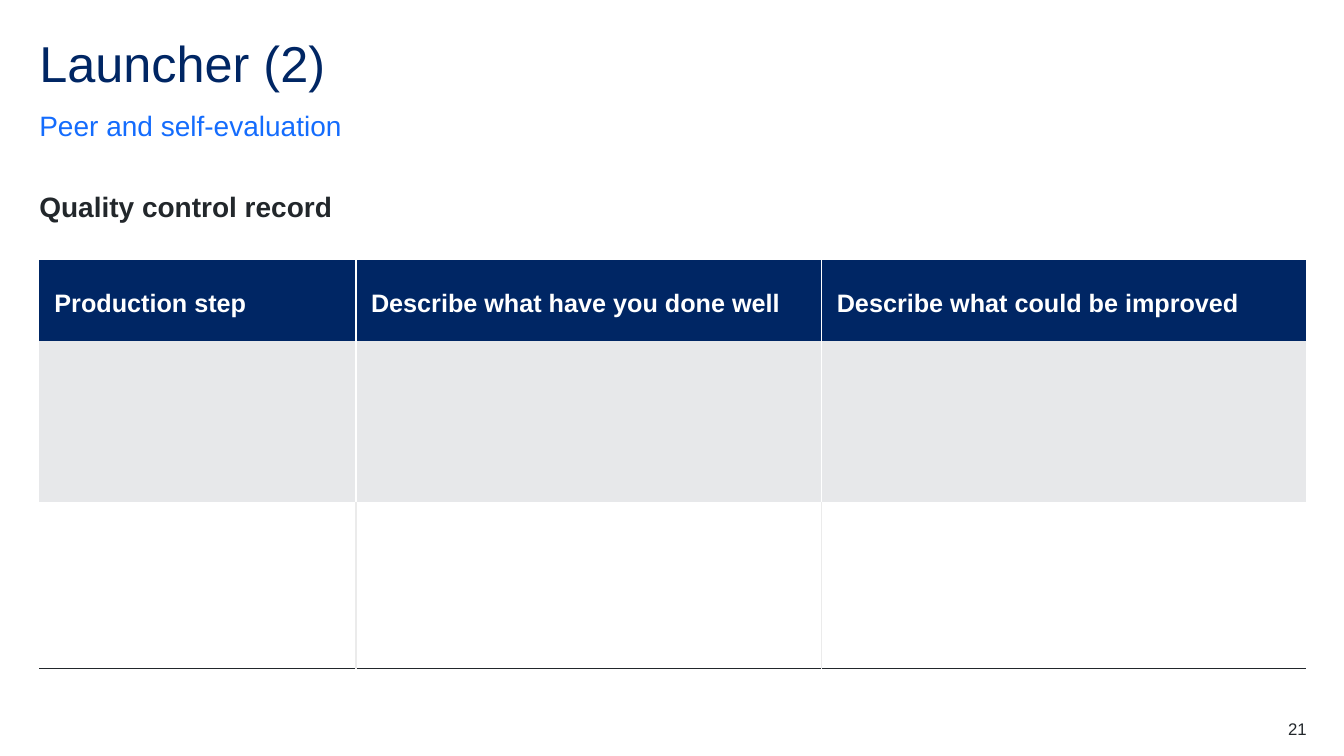
from dataclasses import dataclass

from lxml.etree import SubElement
from pptx import Presentation
from pptx.dml.color import RGBColor
from pptx.enum.text import MSO_ANCHOR, MSO_AUTO_SIZE, PP_ALIGN
from pptx.oxml.ns import qn
from pptx.util import Inches, Pt


@dataclass(frozen=True)
class Theme:
    """Colours, font and type sizes of the slide."""
    font: str = "Arial"
    navy: str = "002664"
    blue: str = "146CFD"
    ink: str = "22272B"
    white: str = "FFFFFF"
    band: str = "E7E8EA"
    rule: str = "EBEBEB"
    title_size: int = 36
    lead_size: int = 20
    header_size: int = 18
    number_size: int = 12


THEME = Theme()
LEFT, WIDTH = 0.39, 12.56
COLUMN_WIDTHS = (3.14, 4.62, 4.8)
ROW_HEIGHTS = (0.8, 1.6, 1.65)
ROW_FILLS = (THEME.navy, THEME.band, THEME.white)
DIVIDERS = (THEME.white, THEME.white, THEME.rule)
HEADERS = (
    "Production step",
    "Describe what have you done well",
    "Describe what could be improved",
)
NO_STYLE = "{2D5ABB26-0587-4C30-8999-92F81FD0307C}"


def write(text_frame, text, size, color, bold=False, line_spacing=1.0,
          before=0, after=0, align=PP_ALIGN.LEFT):
    """Set one paragraph of text and format it."""
    text_frame.text = text
    paragraph = text_frame.paragraphs[0]
    paragraph.alignment = align
    paragraph.line_spacing = line_spacing
    paragraph.space_before, paragraph.space_after = Pt(before), Pt(after)
    font = paragraph.runs[0].font
    font.name, font.size, font.bold = THEME.font, Pt(size), bold
    font.color.rgb = RGBColor.from_string(color)


def prepare_frame(shape, anchor):
    """Remove the insets, wrap the text and fix the frame size."""
    frame = shape.text_frame
    frame.margin_left = frame.margin_right = 0
    frame.margin_top = frame.margin_bottom = 0
    frame.word_wrap = True
    frame.auto_size = MSO_AUTO_SIZE.NONE
    frame.vertical_anchor = anchor
    return frame


def add_title(slide, text):
    """Place and format the title placeholder."""
    title = slide.shapes.title
    title.left, title.top = Inches(LEFT), Inches(0.39)
    title.width, title.height = Inches(WIDTH), Inches(0.6)
    frame = prepare_frame(title, MSO_ANCHOR.TOP)
    write(frame, text, THEME.title_size, THEME.navy, line_spacing=0.9)


def add_text(slide, text, left, top, width, height, size, color,
             anchor=MSO_ANCHOR.TOP, **style):
    """Add a text box with one styled paragraph."""
    box = slide.shapes.add_textbox(
        Inches(left), Inches(top), Inches(width), Inches(height))
    write(prepare_frame(box, anchor), text, size, color, **style)


def add_border(cell, side, color):
    """Draw a one-point border on one side of a cell."""
    line = SubElement(cell._tc.get_or_add_tcPr(), qn(f"a:ln{side}"), w=str(Pt(1)))
    fill = SubElement(line, qn("a:solidFill"))
    SubElement(fill, qn("a:srgbClr"), val=color)


def format_cell(cell, row, column):
    """Give a cell its margins, borders and fill."""
    cell.margin_left = cell.margin_right = Inches(0.15)
    cell.margin_top = cell.margin_bottom = Inches(0.15)
    if column > 0:
        add_border(cell, "L", DIVIDERS[row])
    if column < len(COLUMN_WIDTHS) - 1:
        add_border(cell, "R", DIVIDERS[row])
    if row == len(ROW_HEIGHTS) - 1:
        add_border(cell, "B", THEME.ink)
    cell.fill.solid()
    cell.fill.fore_color.rgb = RGBColor.from_string(ROW_FILLS[row])


def add_record_table(slide):
    """Add the quality control record with its empty rows."""
    table = slide.shapes.add_table(
        len(ROW_HEIGHTS), len(COLUMN_WIDTHS), Inches(LEFT), Inches(2.58),
        Inches(WIDTH), Inches(sum(ROW_HEIGHTS))).table
    table.horz_banding = False
    table._tbl.tblPr.find(qn("a:tableStyleId")).text = NO_STYLE
    for column, width in enumerate(COLUMN_WIDTHS):
        table.columns[column].width = Inches(width)
    for row, height in enumerate(ROW_HEIGHTS):
        table.rows[row].height = Inches(height)
        for column in range(len(COLUMN_WIDTHS)):
            format_cell(table.cell(row, column), row, column)
    for column, header in enumerate(HEADERS):
        write(table.cell(0, column).text_frame, header, THEME.header_size,
              THEME.white, bold=True, line_spacing=1.5, before=12, after=6)


def main():
    """Build and save the slide."""
    presentation = Presentation()
    presentation.slide_width = Inches(13.33)
    presentation.slide_height = Inches(7.5)
    slide = presentation.slides.add_slide(presentation.slide_layouts[5])
    add_title(slide, "Launcher (2)")
    add_text(slide, "Peer and self-evaluation", LEFT, 1.07, WIDTH, 0.34,
             THEME.lead_size, THEME.blue, anchor=MSO_ANCHOR.BOTTOM,
             line_spacing=1.5, after=12)
    add_text(slide, "Quality control record", LEFT, 1.71, WIDTH, 0.6,
             THEME.lead_size, THEME.ink, bold=True, line_spacing=1.5, after=12)
    add_record_table(slide)
    add_text(slide, "21", 12.17, 7.13, 0.79, 0.2, THEME.number_size,
             THEME.ink, align=PP_ALIGN.RIGHT)
    presentation.save("out.pptx")


if __name__ == "__main__":
    main()
